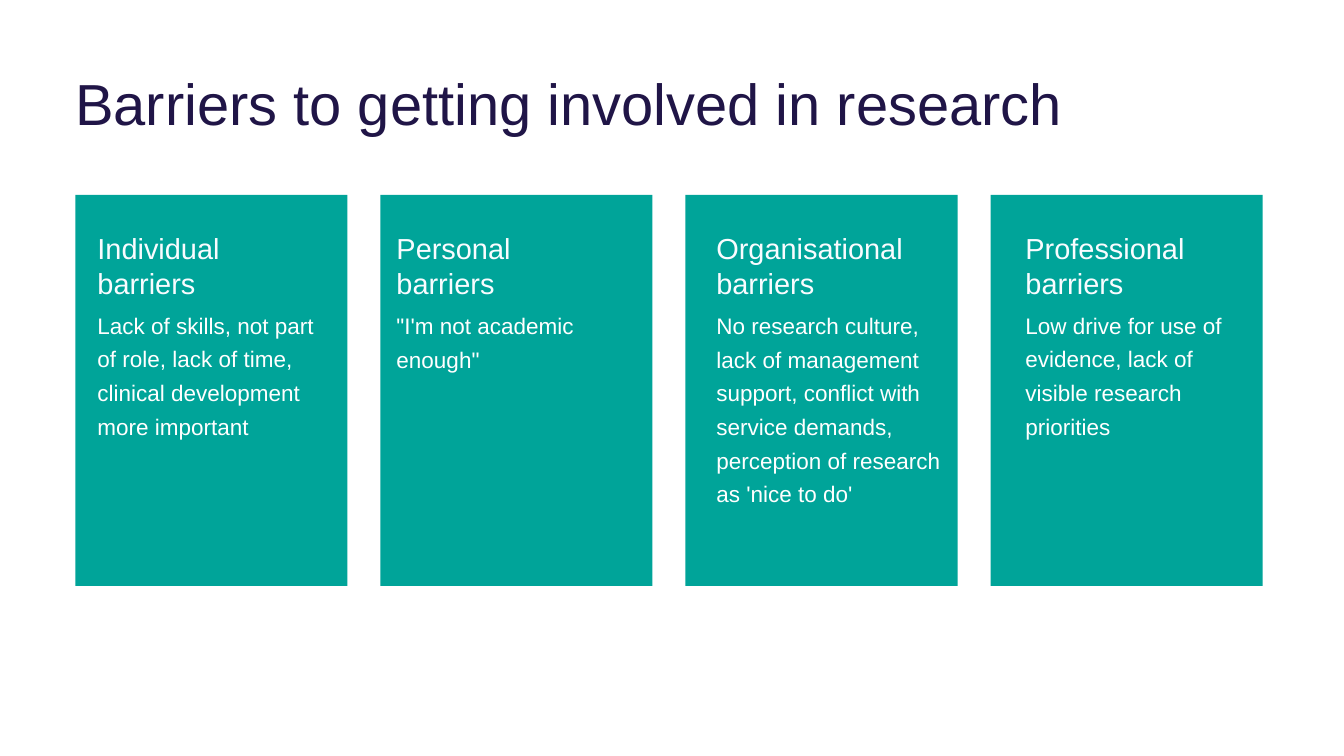
"""Build a slide of four cards on barriers to research."""
from dataclasses import dataclass

from pptx import Presentation
from pptx.dml.color import RGBColor
from pptx.enum import shapes, text
from pptx.slide import Slide
from pptx.text.text import TextFrame
from pptx.util import Inches, Pt

TEAL = RGBColor(0x00, 0xA4, 0x99)
NAVY = RGBColor(0x20, 0x15, 0x47)
PALE = RGBColor(0xF9, 0xFC, 0xFF)
WHITE = RGBColor(0xFF, 0xFF, 0xFF)

LEFT, TOP, WIDTH, HEIGHT, STEP = 1.12, 2.9, 4.05, 5.82, 4.54


@dataclass
class Card:
    head: str
    body: str
    inset: float
    width: float
    depth: float


CARDS = [
    Card("Individual barriers",
         "Lack of skills, not part of role, lack of time, "
         "clinical development more important", 0.33, 3.27, 2),
    Card("Personal barriers", "\"I'm not academic enough\"", 0.24, 3.28, 1.02),
    Card("Organisational barriers",
         "No research culture, lack of management support, conflict with "
         "service demands, perception of research as 'nice to do'",
         0.46, 3.35, 2.98),
    Card("Professional barriers",
         "Low drive for use of evidence, lack of visible research priorities",
         0.52, 3.23, 2),
]


def write(frame: TextFrame, words: str, size: float, lead: float,
          color: RGBColor) -> None:
    frame.text = words
    frame.word_wrap = True
    frame.auto_size = text.MSO_AUTO_SIZE.NONE
    frame.vertical_anchor = text.MSO_ANCHOR.TOP
    frame.margin_left = frame.margin_right = 0
    frame.margin_top = frame.margin_bottom = 0
    para = frame.paragraphs[0]
    para.alignment = text.PP_ALIGN.LEFT
    para.line_spacing = Pt(lead)
    para.space_before = Pt(0)
    font = para.runs[0].font
    font.name, font.size = "Arial", Pt(size)
    font.color.rgb = color


def add_title(slide: Slide, words: str) -> None:
    title = slide.shapes.title
    title.left, title.top = Inches(LEFT), Inches(1)
    title.width, title.height = Inches(17.97), Inches(1.17)
    write(title.text_frame, words, 62, 74.4, NAVY)


def add_panel(slide: Slide, left: float) -> None:
    panel = slide.shapes.add_shape(
        shapes.MSO_SHAPE.RECTANGLE, Inches(left), Inches(TOP),
        Inches(WIDTH), Inches(HEIGHT))
    panel.shadow.inherit = False
    panel.fill.solid()
    panel.fill.fore_color.rgb = TEAL
    panel.line.fill.background()


def add_card(slide: Slide, card: Card, left: float) -> None:
    add_panel(slide, left)
    edge = Inches(left + card.inset)
    head = slide.shapes.add_textbox(edge, Inches(3.43), Inches(2.98), Inches(1.1))
    write(head.text_frame, card.head, 31, 37.2, PALE)
    body = slide.shapes.add_textbox(
        edge, Inches(4.54), Inches(card.width), Inches(card.depth))
    write(body.text_frame, card.body, 24.1, 36.1, WHITE)


def main() -> None:
    deck = Presentation()
    deck.slide_width, deck.slide_height = Inches(20), Inches(11.25)
    slide = deck.slides.add_slide(deck.slide_layouts[5])
    add_title(slide, "Barriers to getting involved in research")
    for i, card in enumerate(CARDS):
        add_card(slide, card, LEFT + i * STEP)
    deck.save("out.pptx")


if __name__ == "__main__":
    main()
